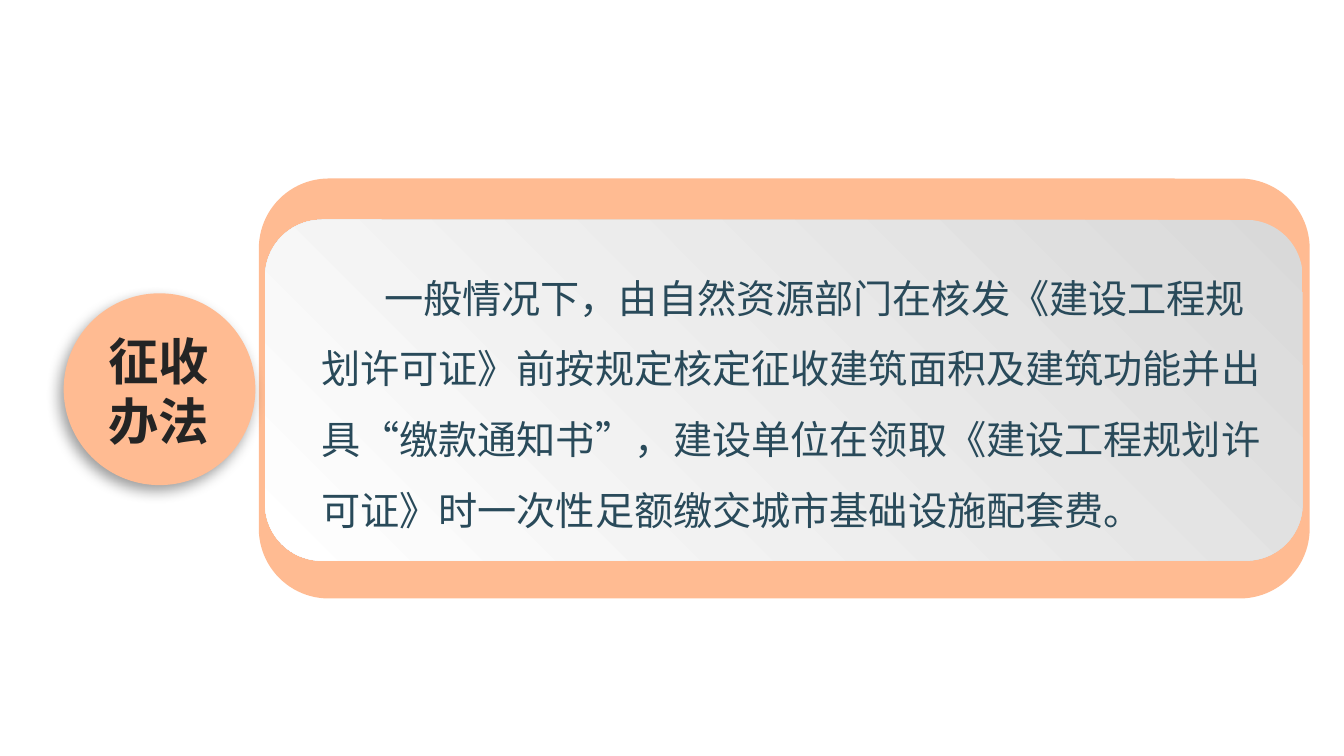
import pptx
import pptx.util
import pptx.dml.color
import pptx.enum.shapes
import pptx.enum.text
import lxml.etree

Pt = pptx.util.Pt
RGB = pptx.dml.color.RGBColor
SHAPE = pptx.enum.shapes.MSO_SHAPE
ALIGN = pptx.enum.text.PP_ALIGN
DRAWING = "http://schemas.openxmlformats.org/drawingml/2006/main"

theme = {
    "peach": RGB.from_string("FFBB92"),
    "panel_dark": RGB.from_string("D9D9D9"),
    "panel_light": RGB.from_string("FFFFFF"),
    "body": RGB.from_string("294A5A"),
    "title": RGB.from_string("242424"),
    "font": "Noto Sans CJK SC",
    "body_size": Pt(28),
    "title_size": Pt(36),
}

deck = pptx.Presentation()
deck.slide_width, deck.slide_height = Pt(960.5), Pt(540)
page = deck.slides.add_slide(deck.slide_layouts[6])


def add_peach_shape(kind, left, top, width, height):
    shape = page.shapes.add_shape(kind, Pt(left), Pt(top), Pt(width), Pt(height))
    shape.shadow.inherit = False
    shape.line.fill.background()
    shape.fill.solid()
    shape.fill.fore_color.rgb = theme["peach"]
    return shape


def add_text(left, top, width, height, lines, size, color):
    box = page.shapes.add_textbox(Pt(left), Pt(top), Pt(width), Pt(height))
    frame = box.text_frame
    frame.word_wrap = True
    frame.text = "\n".join(lines)
    for para in frame.paragraphs:
        para.font.name = theme["font"]
        para.font.size = size
        para.font.color.rgb = color
        # East Asian typeface
        defaults = para._p.pPr.find(f"{{{DRAWING}}}defRPr")
        lxml.etree.SubElement(defaults, f"{{{DRAWING}}}ea", typeface=theme["font"])
    return frame.paragraphs


# Peach frame with the grey gradient panel on it
add_peach_shape(SHAPE.ROUNDED_RECTANGLE, 185, 127.5, 751, 300)
panel = add_peach_shape(SHAPE.ROUNDED_RECTANGLE, 189.5, 157, 741.5, 243.5)
panel.fill.gradient()
panel.fill.gradient_angle = 225
for stop, color in zip(panel.fill.gradient_stops, ("panel_dark", "panel_light")):
    stop.color.rgb = theme[color]

# Title disc with a soft shadow to the lower left
disc = add_peach_shape(SHAPE.OVAL, 45.5, 209.5, 137, 137)
effects = disc._element.spPr.find(f"{{{DRAWING}}}effectLst")
shadow = lxml.etree.SubElement(
    effects, f"{{{DRAWING}}}outerShdw", blurRad=str(Pt(10)), dist=str(Pt(5)),
    dir=str(123 * 60000), algn="ctr", rotWithShape="0")
shade = lxml.etree.SubElement(shadow, f"{{{DRAWING}}}srgbClr", val="000000")
lxml.etree.SubElement(shade, f"{{{DRAWING}}}alpha", val="39000")

# Body text with an indented first line
body = add_text(
    222.5, 175.5, 690.5, 211,
    ["一般情况下，由自然资源部门在核发《建设工程规划许可证》前按规定核定征收建筑面积及建筑功能"
     "并出具“缴款通知书”，建设单位在领取《建设工程规划许可证》时一次性足额缴交城市基础设施配套费。"],
    theme["body_size"], theme["body"])
body[0].line_spacing = 1.5
body[0]._p.pPr.set("indent", str(Pt(45)))

# Title text
for para in add_text(52, 232, 123, 94.5, ["征收", "办法"],
                     theme["title_size"], theme["title"]):
    para.alignment = ALIGN.CENTER
    para.font.bold = True

deck.save("out.pptx")
